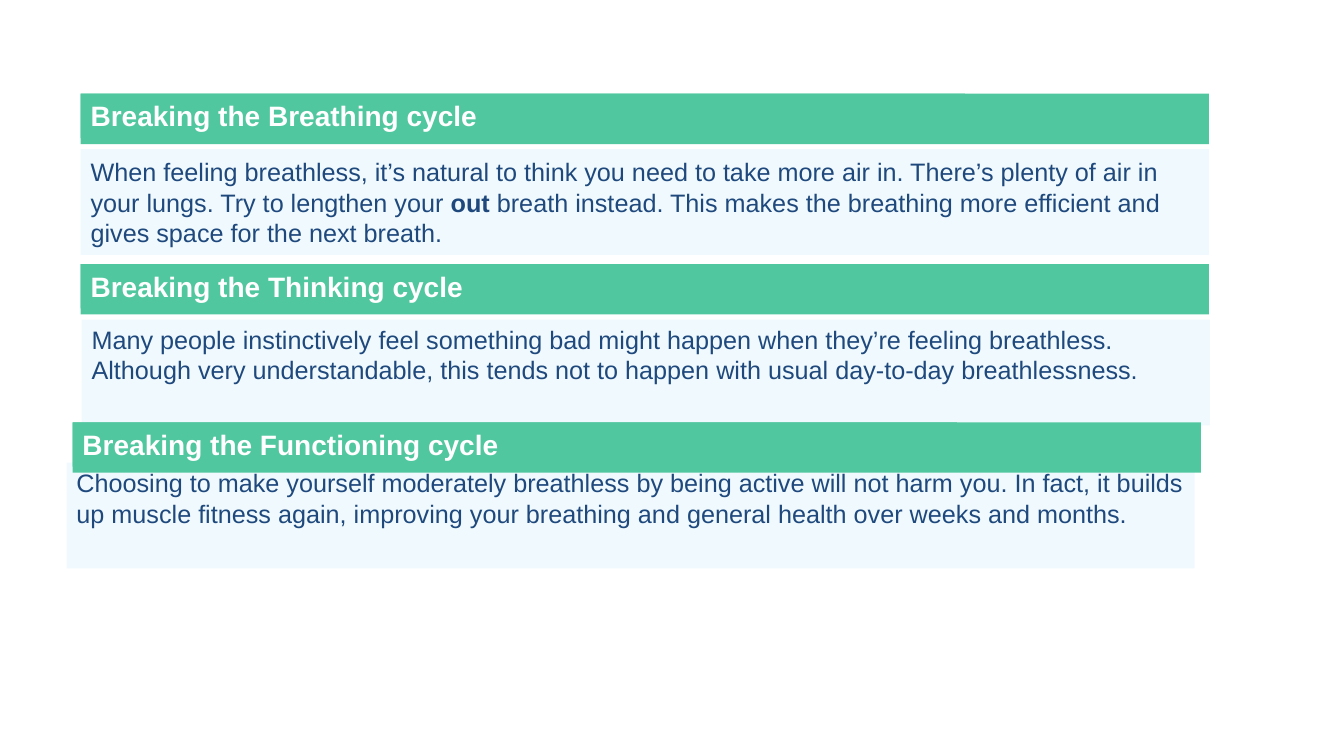
from pptx import Presentation
from pptx.dml.color import RGBColor
from pptx.enum.shapes import MSO_SHAPE
from pptx.enum.text import MSO_ANCHOR, MSO_AUTO_SIZE, PP_ALIGN
from pptx.util import Inches, Pt

RECT = MSO_SHAPE.RECTANGLE
TOP, MIDDLE = MSO_ANCHOR.TOP, MSO_ANCHOR.MIDDLE
LEFT = PP_ALIGN.LEFT
GROW = MSO_AUTO_SIZE.SHAPE_TO_FIT_TEXT

GREEN = RGBColor(0x51, 0xC7, 0x9F)
PALE = RGBColor(0xF0, 0xFA, 0xFE)
NAVY = RGBColor(0x1F, 0x49, 0x7D)
WHITE = RGBColor(0xFF, 0xFF, 0xFF)

WIDTH = 11.19
SECTIONS = [
    ("Breaking the Breathing cycle", (0.8, 0.93), (0.8, 1.48), MIDDLE,
     [("When feeling breathless, it’s natural to think you need to take more air in. "
       "There’s plenty of air in your lungs. Try to lengthen your ", False),
      ("out ", True),
      ("breath instead. This makes the breathing more efficient and gives space "
       "for the next breath.", False)]),
    ("Breaking the Thinking cycle", (0.8, 2.62), (0.81, 3.17), TOP,
     [("Many people instinctively feel something bad might happen when they’re "
       "feeling breathless. Although very understandable, this tends not to happen "
       "with usual day-to-day breathlessness.", False)]),
    ("Breaking the Functioning cycle", (0.72, 4.19), (0.66, 4.59), TOP,
     [("Choosing to make yourself moderately breathless by being active will not "
       "harm you. In fact, it builds up muscle fitness again, improving your "
       "breathing and general health over weeks and months.", False)]),
]


class CycleSlide:
    font = "Arial"

    def __init__(self, prs):
        self.s = prs.slides.add_slide(prs.slide_layouts[6])

    def rect(self, shapes, x, y, w, h, color):
        sp = shapes.add_shape(RECT, Inches(x), Inches(y), Inches(w), Inches(h))
        sp.shadow.inherit = False
        sp.fill.solid()
        sp.fill.fore_color.rgb = color
        sp.line.fill.background()
        return sp

    def add_text(self, sp, runs, size, color, anchor):
        tf = sp.text_frame
        tf.word_wrap = True
        tf.vertical_anchor = anchor
        p = tf.paragraphs[0]
        p.alignment = LEFT
        for text, bold in runs:
            r = p.add_run()
            r.text = text
            r.font.name = self.font
            r.font.size = Pt(size)
            r.font.bold = bold
            r.font.color.rgb = color

    def body(self, x, y, runs, anchor):
        sp = self.rect(self.s.shapes, x, y, WIDTH, 1.05, PALE)
        self.add_text(sp, runs, 18, NAVY, anchor)

    def heading(self, x, y, text):
        group = self.s.shapes.add_group_shape()
        self.rect(group.shapes, x, y, WIDTH, 0.5, GREEN)
        label = self.rect(group.shapes, x, y, 8.77, 0.44, GREEN)
        self.add_text(label, [(text, True)], 20, WHITE, TOP)
        label.text_frame.auto_size = GROW


def main():
    prs = Presentation()
    prs.slide_width, prs.slide_height = Inches(13.33), Inches(7.5)
    slide = CycleSlide(prs)
    for title, heading_at, body_at, anchor, runs in SECTIONS:
        slide.body(*body_at, runs, anchor)
        slide.heading(*heading_at, title)
    prs.save("out.pptx")


if __name__ == "__main__":
    main()
